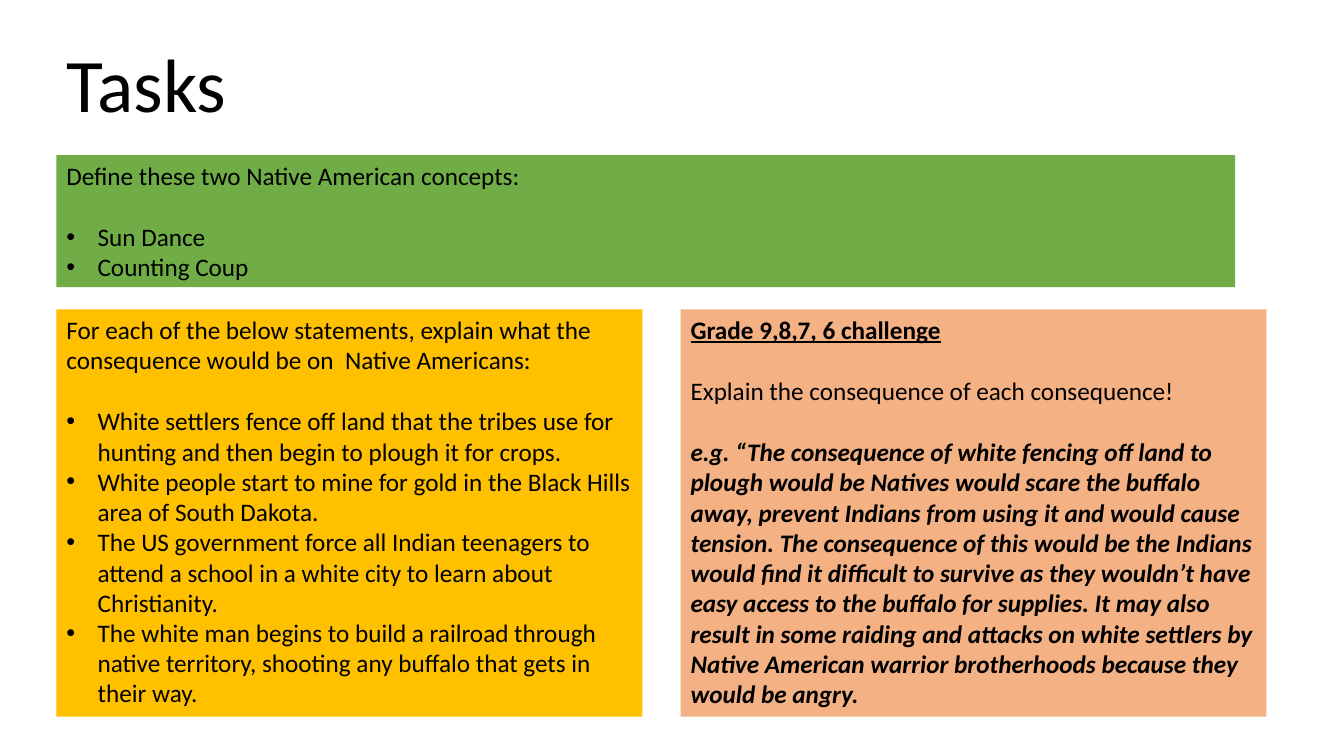
from dataclasses import dataclass, field

from lxml.etree import SubElement
from pptx import Presentation
from pptx.dml.color import RGBColor as Rgb
from pptx.enum.text import MSO_ANCHOR as Anchor, MSO_AUTO_SIZE as Fit, PP_ALIGN as Align
from pptx.oxml.ns import qn
from pptx.util import Inches, Pt

WIDE, HIGH = Inches(13.33), Inches(7.5)
LINE = Pt(22)  # height of one line of body text
DENT = Inches(0.31)
FRAME = {"word_wrap": True, "auto_size": Fit.NONE, "vertical_anchor": Anchor.TOP}

# Edges in percent of the slide's width and height
LEFT, RIGHT = 4.2, 50.64
HALF, FULL = 43.59, 87.7
LOW, TALL = 40.93, 53.87


@dataclass
class Para:
    text: str
    gap: bool = False
    bullet: bool = False
    font: dict = field(default_factory=dict)


@dataclass
class Panel:
    area: tuple[float, float, float, float]
    fill: str
    paras: list[Para]


def color(code: str) -> Rgb:
    return Rgb.from_string(code)


def place(area: tuple[float, float, float, float]) -> list[int]:
    return [round(part * size / 100) for part, size in zip(area, (WIDE, HIGH) * 2)]


def style(item: object, values: dict) -> None:
    for name, value in values.items():
        setattr(item, name, value)


def write(para, item: Para, size: int = 18) -> None:
    run = para.add_run()
    run.text = item.text
    style(run.font, {"name": "Calibri", "size": Pt(size), **item.font})
    run.font.color.rgb = color("000000")
    style(para, {"alignment": Align.LEFT, "space_before": LINE if item.gap else Pt(0)})
    if item.bullet:
        props = para._p.get_or_add_pPr()
        props.set("marL", str(DENT))
        props.set("indent", str(-DENT))
        SubElement(props, qn("a:buFont")).set("typeface", "Arial")
        SubElement(props, qn("a:buChar")).set("char", "•")


def draw(slide, panel: Panel) -> None:
    box = slide.shapes.add_textbox(*place(panel.area))
    box.fill.solid()
    box.fill.fore_color.rgb = color(panel.fill)
    frame = box.text_frame
    style(frame, FRAME)
    for pos, item in enumerate(panel.paras):
        write(frame.add_paragraph() if pos else frame.paragraphs[0], item)


def points(*texts: str) -> list[Para]:
    """Bulleted list, set off by one line from the text above."""
    return [Para(text, gap=pos == 0, bullet=True) for pos, text in enumerate(texts)]


PANELS = [
    # Concepts
    Panel((LEFT, 20.53, FULL, 17.47), "70AD47", [
        Para("Define these two Native American concepts:"),
        *points("Sun Dance", "Counting Coup"),
    ]),
    # Statements
    Panel((LEFT, LOW, HALF, TALL), "FFC000", [
        Para("For each of the below statements, explain what the consequence "
             "would be on  Native Americans:"),
        *points(
            "White settlers fence off land that the tribes use for hunting "
            "and then begin to plough it for crops.",
            "White people start to mine for gold in the Black Hills area of South Dakota.",
            "The US government force all Indian teenagers to attend a school "
            "in a white city to learn about Christianity.",
            "The white man begins to build a railroad through native territory, "
            "shooting any buffalo that gets in their way.",
        ),
    ]),
    # Challenge
    Panel((RIGHT, LOW, HALF, TALL), "F4B183", [
        Para("Grade 9,8,7, 6 challenge", font={"bold": True, "underline": True}),
        Para("Explain the consequence of each consequence!", gap=True),
        Para("e.g. “The consequence of white fencing off land to plough would be "
             "Natives would scare the buffalo away, prevent Indians from using it "
             "and would cause tension. The consequence of this would be the Indians "
             "would find it difficult to survive as they wouldn’t have easy access "
             "to the buffalo for supplies. It may also result in some raiding and "
             "attacks on white settlers by Native American warrior brotherhoods "
             "because they would be angry.",
             gap=True, font={"bold": True, "italic": True}),
    ]),
]


def main() -> None:
    deck = Presentation()
    style(deck, {"slide_width": WIDE, "slide_height": HIGH})
    slide = deck.slides.add_slide(deck.slide_layouts[5])

    # Title
    title = slide.shapes.title
    area = place((LEFT, 4.27, 46.44, 13.47))
    style(title, dict(zip(("left", "top", "width", "height"), area)))
    style(title.text_frame, FRAME)
    write(title.text_frame.paragraphs[0], Para("Tasks"), 54)

    # Panels
    for panel in PANELS:
        draw(slide, panel)
    deck.save("out.pptx")


if __name__ == "__main__":
    main()
